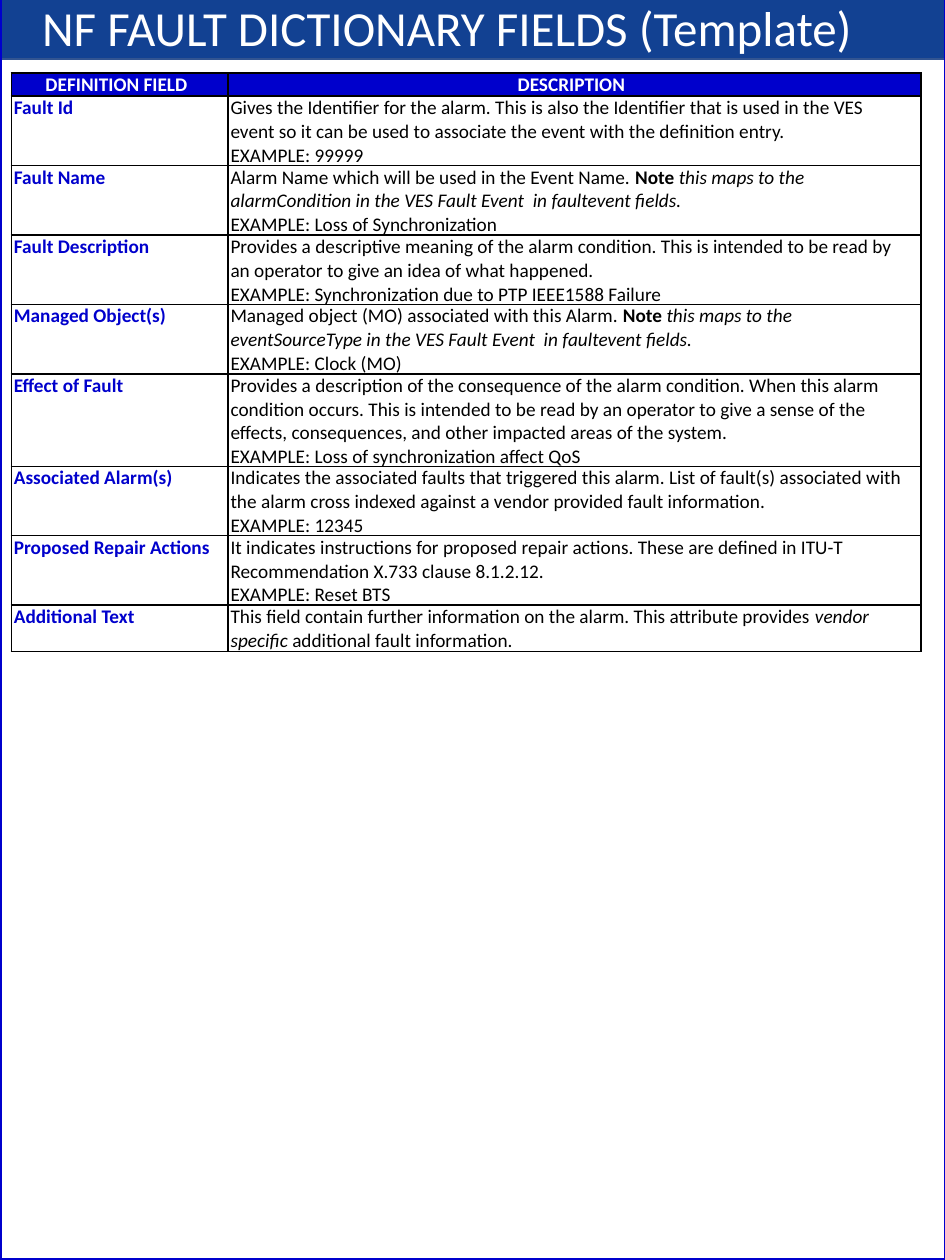
from typing import NamedTuple

from lxml import etree
from pptx import Presentation
from pptx.dml.color import RGBColor
from pptx.enum.shapes import MSO_SHAPE
from pptx.enum.text import MSO_ANCHOR, MSO_AUTO_SIZE, PP_ALIGN
from pptx.oxml.ns import qn
from pptx.util import Inches, Pt

RECTANGLE = MSO_SHAPE.RECTANGLE
CENTER, LEFT = PP_ALIGN.CENTER, PP_ALIGN.LEFT
TOP = MSO_ANCHOR.TOP
GROW = MSO_AUTO_SIZE.SHAPE_TO_FIT_TEXT

FONT = "Calibri"
COLORS = {
    "banner": "124192",
    "banner_edge": "325491",
    "accent": "0000CC",
    "white": "FFFFFF",
    "black": "000000",
}
LINE_HEIGHT = 0.18
COLUMN_WIDTHS = (1.72, 5.5)


class Span(NamedTuple):
    text: str
    bold: bool = False
    italic: bool = False


class Field(NamedTuple):
    name: str
    description: list[Span]
    example: str
    lines: int
    right_inset: float = 0.07


def mapping_note(attribute: str) -> list[Span]:
    return [
        Span("Note ", bold=True),
        Span(f"this maps to the {attribute} in the VES Fault Event  in faultevent fields.",
             italic=True),
    ]


FIELDS = [
    Field("Fault Id", [Span(
        "Gives the Identifier for the alarm. This is also the Identifier that is used in "
        "the VES event so it can be used to associate the event with the definition entry.")],
        "99999", 3),
    Field("Fault Name", [
        Span("Alarm Name which will be used in the Event Name. "),
        *mapping_note("alarmCondition")],
        "Loss of Synchronization", 3),
    Field("Fault Description", [Span(
        "Provides a descriptive meaning of the alarm condition. This is intended to be "
        "read by an operator to give an idea of what happened.")],
        "Synchronization due to PTP IEEE1588 Failure", 3),
    Field("Managed Object(s)", [
        Span("Managed object (MO) associated with this Alarm. "),
        *mapping_note("eventSourceType")],
        "Clock (MO)", 3),
    Field("Effect of Fault", [Span(
        "Provides a description of the consequence of the alarm condition. When this alarm "
        "condition occurs. This is intended to be read by an operator to give a sense of "
        "the effects, consequences, and other impacted areas of the system.")],
        "Loss of synchronization affect QoS", 4),
    Field("Associated Alarm(s)", [Span(
        "Indicates the associated faults that triggered this alarm. List of fault(s) "
        "associated with the alarm cross indexed against a vendor provided fault "
        "information.")],
        "12345", 3),
    Field("Proposed Repair Actions", [Span(
        "It indicates instructions for proposed repair actions. These are defined in ITU-T "
        "Recommendation X.733 clause 8.1.2.12.")],
        "Reset BTS", 3, 0.02),
    Field("Additional Text", [
        Span("This field contain further information on the alarm. This attribute provides "),
        Span("vendor specific ", italic=True),
        Span("additional fault information.")],
        "", 2, 0.02),
]


def rgb(name: str) -> RGBColor:
    return RGBColor.from_string(COLORS[name])


def add_spans(paragraph, spans: list[Span], size: float, color: str, align=LEFT) -> None:
    paragraph.alignment = align
    for span in spans:
        run = paragraph.add_run()
        run.text = span.text
        font = run.font
        font.name, font.size = FONT, Pt(size)
        font.bold, font.italic = span.bold, span.italic
        font.color.rgb = rgb(color)


def add_box(slide, left: float, top: float, width: float, height: float,
            edge: str, edge_width: float, fill: str = "") -> None:
    box = slide.shapes.add_shape(
        RECTANGLE, Inches(left), Inches(top), Inches(width), Inches(height))
    box.shadow.inherit = False
    box.line.color.rgb = rgb(edge)
    box.line.width = Pt(edge_width)
    if fill:
        box.fill.solid()
        box.fill.fore_color.rgb = rgb(fill)
    else:
        box.fill.background()


def add_borders(cell) -> None:
    properties = cell._tc.get_or_add_tcPr()
    for position, side in enumerate(("a:lnL", "a:lnR", "a:lnT", "a:lnB")):
        border = etree.Element(qn(side), w=str(Pt(1)))
        solid = etree.SubElement(border, qn("a:solidFill"))
        etree.SubElement(solid, qn("a:srgbClr"), val=COLORS["black"])
        properties.insert(position, border)


def fill_cell(cell, paragraphs: list[list[Span]], color: str, align=LEFT,
              fill: str = "", right_inset: float = 0.07) -> None:
    cell.margin_left, cell.margin_right = Inches(0.02), Inches(right_inset)
    cell.margin_top = cell.margin_bottom = Inches(0)
    cell.vertical_anchor = TOP
    if fill:
        cell.fill.solid()
        cell.fill.fore_color.rgb = rgb(fill)
    else:
        cell.fill.background()
    add_borders(cell)
    frame = cell.text_frame
    for index, spans in enumerate(paragraphs):
        paragraph = frame.add_paragraph() if index else frame.paragraphs[0]
        add_spans(paragraph, spans, 11, color, align)


def add_field_table(slide) -> None:
    line_counts = [1] + [field.lines for field in FIELDS]
    table = slide.shapes.add_table(
        len(line_counts), len(COLUMN_WIDTHS), Inches(0.09), Inches(0.58),
        Inches(sum(COLUMN_WIDTHS)), Inches(LINE_HEIGHT * sum(line_counts))).table
    table.first_row = table.horz_banding = False
    for column, width in zip(table.columns, COLUMN_WIDTHS):
        column.width = Inches(width)
    for row, lines in zip(table.rows, line_counts):
        row.height = Inches(LINE_HEIGHT * lines)

    for column, heading in enumerate(("DEFINITION FIELD", "DESCRIPTION")):
        fill_cell(table.cell(0, column), [[Span(heading, bold=True)]],
                  "white", CENTER, "accent")
    for row, field in enumerate(FIELDS, start=1):
        fill_cell(table.cell(row, 0), [[Span(field.name, bold=True)]], "accent")
        paragraphs = [field.description]
        if field.example:
            paragraphs.append([Span(f"EXAMPLE: {field.example}")])
        fill_cell(table.cell(row, 1), paragraphs, "black", right_inset=field.right_inset)


def main() -> None:
    deck = Presentation()
    deck.slide_width, deck.slide_height = Inches(7.5), Inches(10)
    slide = deck.slides.add_slide(deck.slide_layouts[6])

    # Title banner
    add_box(slide, 0.01, -0.05, 7.5, 0.52, "banner_edge", 1, "banner")
    title = slide.shapes.add_textbox(
        Inches(0.03), Inches(-0.07), Inches(7.12), Inches(0.57)).text_frame
    title.word_wrap = False
    title.auto_size = GROW
    add_spans(title.paragraphs[0], [Span("NF FAULT DICTIONARY FIELDS (Template) ")],
              28, "white", CENTER)

    # Page frame
    add_box(slide, 0, -0.05, 7.51, 10.05, "accent", 2.25)

    # Field definitions
    add_field_table(slide)
    deck.save("out.pptx")


if __name__ == "__main__":
    main()
